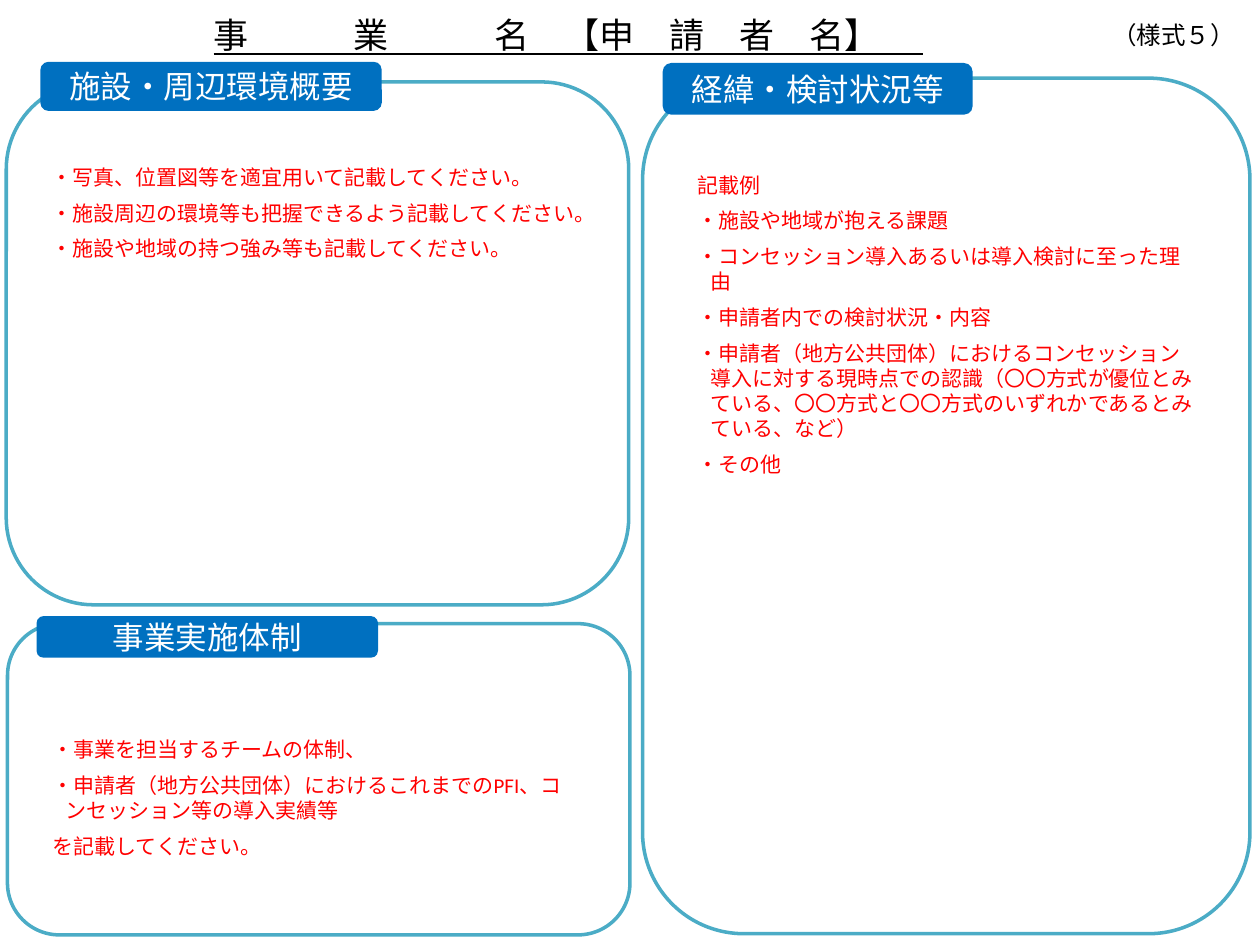
from pptx import Presentation, util as u
from pptx.dml.color import RGBColor
from pptx.enum import shapes, text

HUES = {"black": "000000", "red": "FF0000", "white": "FFFFFF",
        "blue": "0070C0", "teal": "4BACC6"}
RECT = shapes.MSO_SHAPE.RECTANGLE
ROUND = shapes.MSO_SHAPE.ROUNDED_RECTANGLE
LEFT, MID, RIGHT = (text.PP_ALIGN.LEFT, text.PP_ALIGN.CENTER,
                    text.PP_ALIGN.RIGHT)

# Each panel: frame box, tag box, tag wording, body box, body lines
PANELS = [
    ((0.05, 0.65, 4.94, 4.15), (0.32, 0.49, 2.71, 0.39), "施設・周辺環境概要",
     (0.31, 0.96, 4.35, 1.46),
     ["・写真、位置図等を適宜用いて記載してください。",
      "・施設周辺の環境等も把握できるよう記載してください。",
      "・施設や地域の持つ強み等も記載してください。"]),
    ((5.1, 0.62, 4.82, 6.79), (5.26, 0.5, 2.46, 0.41), "経緯・検討状況等",
     (5.44, 1.01, 4.14, 3.13),
     ["記載例",
      "・施設や地域が抱える課題",
      "・コンセッション導入あるいは導入検討に至った理由",
      "・申請者内での検討状況・内容",
      "・申請者（地方公共団体）におけるコンセッション導入に対する現時点での認識"
      "（〇〇方式が優位とみている、〇〇方式と〇〇方式のいずれかであるとみている、など）",
      "・その他"]),
    ((0.06, 4.95, 4.94, 2.47), (0.29, 4.89, 2.71, 0.33), "事業実施体制",
     (0.32, 5.65, 4.34, 1.36),
     ["・事業を担当するチームの体制、",
      "・申請者（地方公共団体）におけるこれまでのPFI、コンセッション等の導入実績等",
      "を記載してください。"]),
]


def color(name):
    return RGBColor.from_string(HUES[name])


def write(shape, lines, hue, align, hang=0, gap=0, **form):
    """Fill a shape with paragraphs; hang is the hanging indent in inches."""
    frame = shape.text_frame
    frame.word_wrap = True
    frame.vertical_anchor = text.MSO_ANCHOR.MIDDLE
    for i, line in enumerate(lines):
        para = frame.paragraphs[0] if i == 0 else frame.add_paragraph()
        para.alignment = align
        if hang:
            props = para._p.get_or_add_pPr()
            props.set("marL", str(u.Inches(hang)))
            props.set("indent", str(-u.Inches(hang)))
        if i:
            para.space_before = u.Pt(gap)
        run = para.add_run()
        run.text = line
        run.font.color.rgb = color(hue)
        for key, value in {"name": "Calibri", **form}.items():
            setattr(run.font, key, value)


def label(slide, box, line, align, **form):
    shape = slide.shapes.add_textbox(*map(u.Inches, box))
    write(shape, [line], "black", align, **form)


def block(slide, kind, box, fill=None, edge=None):
    shape = slide.shapes.add_shape(kind, *map(u.Inches, box))
    shape.shadow.inherit = False
    if fill:
        shape.fill.solid()
        shape.fill.fore_color.rgb = color(fill)
    else:
        shape.fill.background()
    if edge:
        shape.line.color.rgb = color(edge)
        shape.line.width = u.Pt(2)
    else:
        shape.line.fill.background()
    return shape


def panel(slide, frame, tag, title, body, lines):
    write(block(slide, RECT, body, fill="white"), lines, "red", LEFT,
          hang=0.1, gap=6, size=u.Pt(12))
    block(slide, ROUND, frame, edge="teal")
    write(block(slide, ROUND, tag, fill="blue"), [title], "white", MID,
          size=u.Pt(18))


def main():
    deck = Presentation()
    deck.slide_width, deck.slide_height = u.Inches(10), u.Inches(7.5)
    slide = deck.slides.add_slide(deck.slide_layouts[6])
    label(slide, (8.25, 0.08, 1.65, 0.39), "（様式５）", RIGHT, size=u.Pt(14))
    label(slide, (0.29, 0.06, 8.44, 0.43),
          "事　　　業　　　名　【申　請　者　名】　 ", MID,
          size=u.Pt(20), underline=True)
    for parts in PANELS:
        panel(slide, *parts)
    deck.save("out.pptx")


if __name__ == "__main__":
    main()
